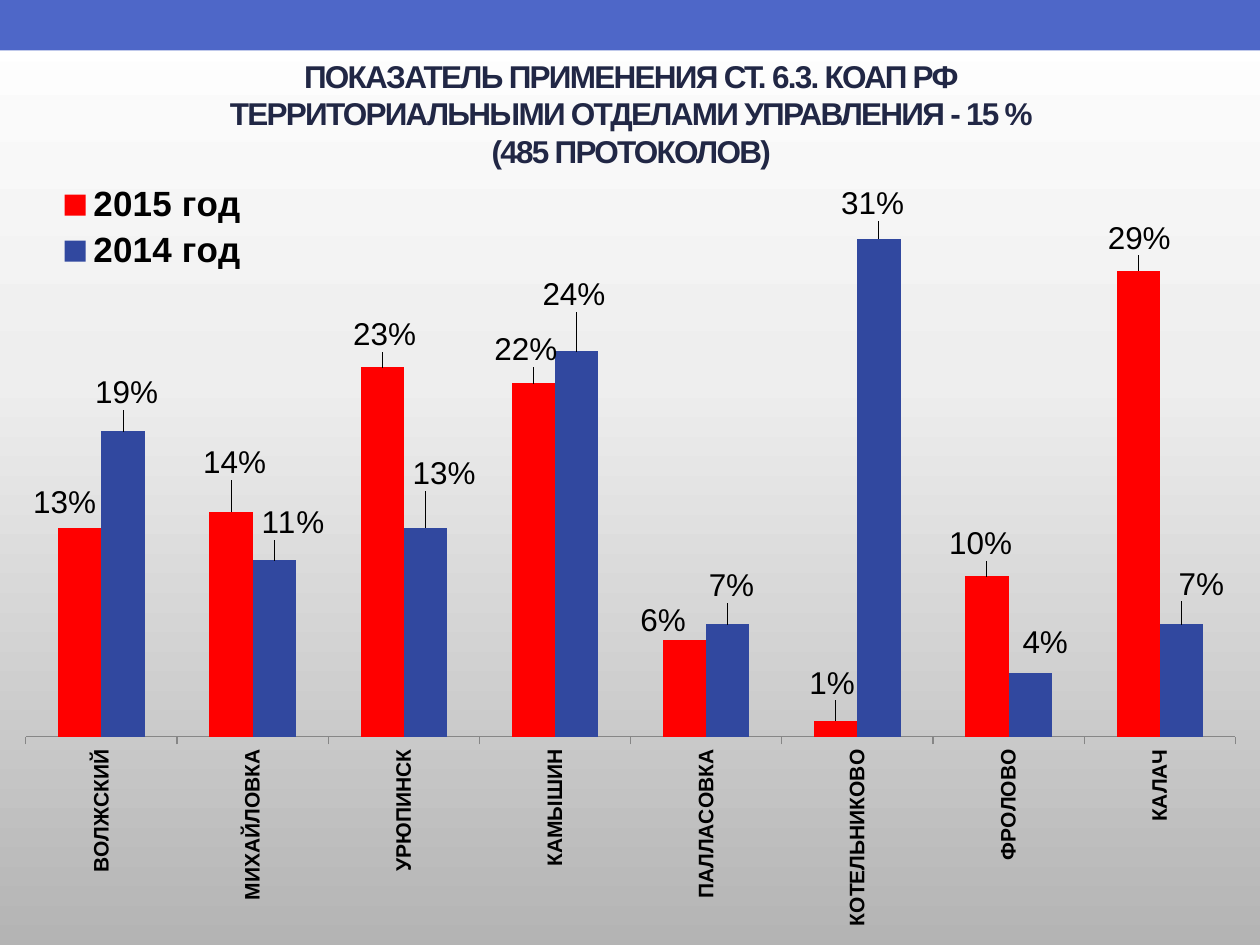
import copy
import pptx
import pptx.chart.data
import pptx.dml.color
import pptx.enum.chart
import pptx.enum.shapes
import pptx.enum.text
import pptx.oxml
import pptx.oxml.ns
import pptx.util

Inches, Pt = pptx.util.Inches, pptx.util.Pt
qn = pptx.oxml.ns.qn


def color(code):
    return pptx.dml.color.RGBColor.from_string(code)


def layout(**parts):
    """Make a manual chart layout from its parts, in document order."""
    body = "".join(f'<c:{key} val="{val}"/>' for key, val in parts.items())
    space = pptx.oxml.ns.nsdecls("c")
    return pptx.oxml.parse_xml(
        f"<c:layout {space}><c:manualLayout>{body}</c:manualLayout></c:layout>")


deck = pptx.Presentation()
deck.slide_width, deck.slide_height = Inches(10), Inches(7.5)
slide = deck.slides.add_slide(deck.slide_layouts[6])

# Background
back = slide.background.fill
back.gradient()
back.gradient_angle = 270
stops = slide.element.find(".//" + qn("a:gsLst"))
stops.append(copy.deepcopy(stops[-1]))
for stop, (place, code) in zip(
        back.gradient_stops, [(0, "FFFFFF"), (0.4, "EEEEEE"), (1, "B4B4B4")]):
    stop.position = place
    stop.color.rgb = color(code)

# Top bands
for top, height, code in [(0.24, 0.25, "FFFFFF"), (0, 0.4, "4E67C8")]:
    band = slide.shapes.add_shape(
        pptx.enum.shapes.MSO_SHAPE.RECTANGLE,
        0, Inches(top), Inches(10), Inches(height))
    band.shadow.inherit = False
    band.fill.solid()
    band.fill.fore_color.rgb = color(code)
    band.line.fill.background()

# Title
title = slide.shapes.add_textbox(Inches(0.51), Inches(0.6), Inches(9), Inches(0.87))
frame = title.text_frame
frame.word_wrap = True
frame.vertical_anchor = pptx.enum.text.MSO_ANCHOR.MIDDLE
frame.margin_top, frame.margin_bottom = 0, Inches(0.27)
head = frame.paragraphs[0]
head.text = "\v".join([
    "ПОКАЗАТЕЛЬ ПРИМЕНЕНИЯ СТ. 6.3. КОАП РФ",
    "ТЕРРИТОРИАЛЬНЫМИ ОТДЕЛАМИ УПРАВЛЕНИЯ - 15 %",
    "(485 ПРОТОКОЛОВ)"])
head.alignment = pptx.enum.text.PP_ALIGN.CENTER
head.font.name, head.font.size, head.font.bold = "Arial", Pt(18), True
head.font.color.rgb = color("212745")
for run in head.runs:
    run.font.size = Pt(18)
    run.font._element.set("spc", "-100")

# Chart: name, colour, values, label shifts in inches
rows = [
    ("2015 год", "FF0000", [13, 14, 23, 22, 6, 1, 10, 29],
     [(-0.12, -0.02), (0.03, -0.21), (0.02, -0.08), (-0.06, -0.09),
      (-0.17, 0.02), (-0.03, -0.12), (-0.05, -0.08), (0.01, -0.08)]),
    ("2014 год", "31489F", [19, 11, 13, 24, 7, 31, 4, 7],
     [(0.03, -0.13), (0.15, -0.12), (0.15, -0.25), (-0.02, -0.27),
      (0.03, -0.13), (-0.05, -0.1), (0.12, -0.06), (0.16, -0.14)]),
]
data = pptx.chart.data.CategoryChartData(number_format='0"%"')
data.categories = ["ВОЛЖСКИЙ", "МИХАЙЛОВКА", "УРЮПИНСК", "КАМЫШИН",
                   "ПАЛЛАСОВКА", "КОТЕЛЬНИКОВО", "ФРОЛОВО", "КАЛАЧ"]
for name, code, vals, shifts in rows:
    data.add_series(name, vals)
wide, high = 9.61, 6.01
chart = slide.shapes.add_chart(
    pptx.enum.chart.XL_CHART_TYPE.COLUMN_CLUSTERED,
    Inches(0.2), Inches(1.36), Inches(wide), Inches(high), data).chart
chart.has_title = False
chart.font.name, chart.font.size = "Arial", Pt(18)
chart.font.color.rgb = color("000000")

plot = chart.plots[0]
plot.gap_width, plot.overlap = 150, 0
plot.vary_by_categories = False
area = chart._chartSpace.find(".//" + qn("c:plotArea"))
for old in area.findall(qn("c:layout")):
    area.remove(old)
area.insert(0, layout(layoutTarget="inner", xMode="edge", yMode="edge",
                      x=0, y=0.004, w=1, h=0.743))

outside = pptx.enum.chart.XL_LABEL_POSITION.OUTSIDE_END
for bars, (name, code, vals, shifts) in zip(plot.series, rows):
    bars.invert_if_negative = False
    bars.format.fill.solid()
    bars.format.fill.fore_color.rgb = color(code)
    labels = bars.data_labels
    labels.show_value = True
    labels.number_format, labels.number_format_is_linked = '0"%"', False
    labels.position = outside
    for spot, (right, down) in enumerate(shifts):
        bars.points[spot].data_label.position = outside
    for label, (right, down) in zip(
            labels._element.findall(qn("c:dLbl")), shifts):
        label.insert(1, layout(x=round(right / wide, 4), y=round(down / high, 4)))

values = chart.value_axis
values.minimum_scale, values.maximum_scale = 0, 35
values.has_major_gridlines = False
values.visible = False

towns = chart.category_axis
towns.major_tick_mark = pptx.enum.chart.XL_TICK_MARK.OUTSIDE
towns.format.line.color.rgb = color("868686")
towns.format.line.width = Pt(0.75)
towns.tick_labels.font.size = Pt(12)
towns.tick_labels.font.bold = True
turn = towns._element.find(qn("c:txPr")).find(qn("a:bodyPr"))
turn.set("rot", "-5400000")
turn.set("vert", "horz")

chart.has_legend = True
legend = chart.legend
legend.position = pptx.enum.chart.XL_LEGEND_POSITION.RIGHT
legend.include_in_layout = False
legend.font.size, legend.font.bold = Pt(20), True
for old in legend._element.findall(qn("c:layout")):
    legend._element.remove(old)
legend._element.find(qn("c:legendPos")).addnext(
    layout(xMode="edge", yMode="edge", x=0.02, y=0.01, w=0.17, h=0.13))

deck.save("out.pptx")
